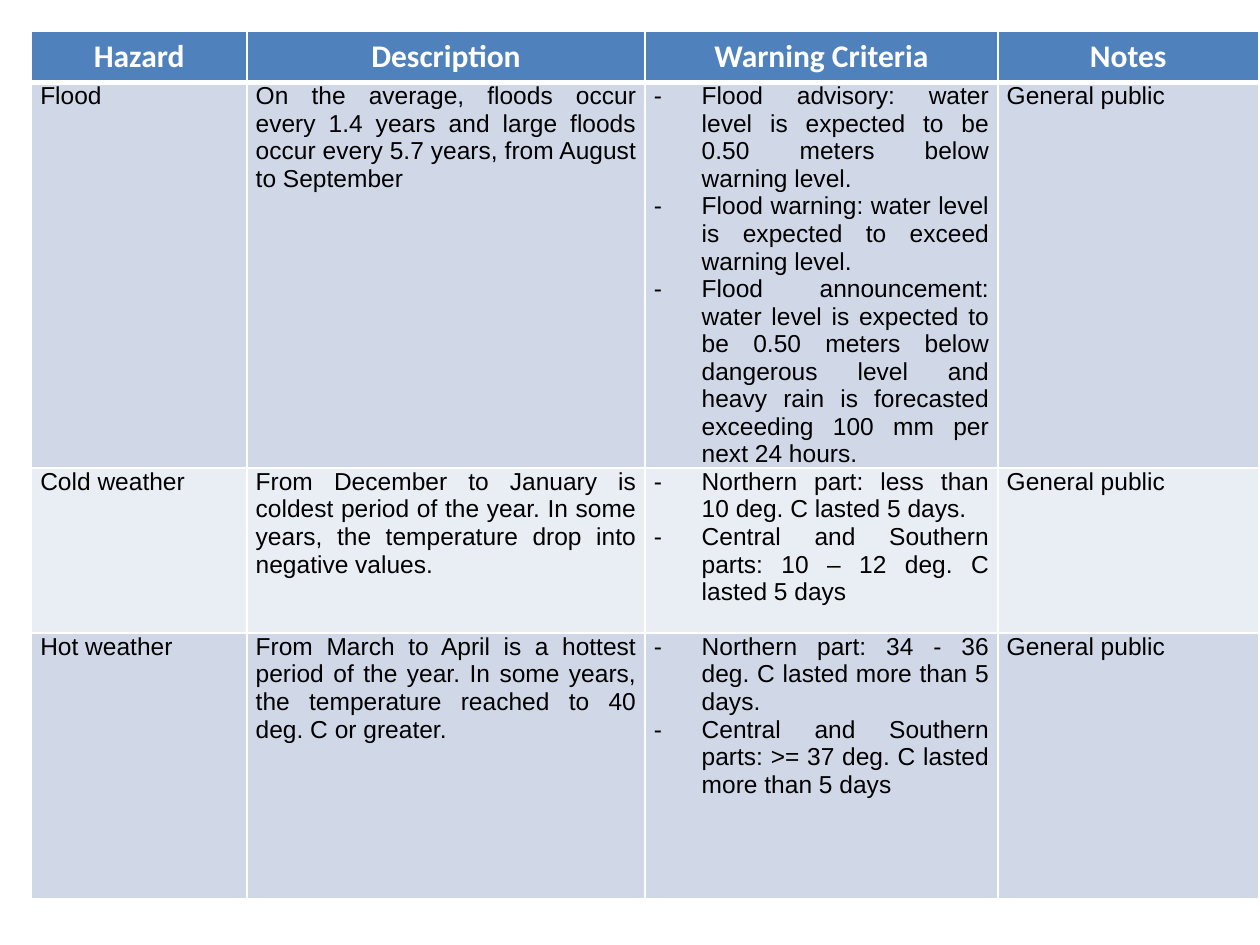
import pptx
import pptx.util
import pptx.dml.color
import pptx.enum.text
import pptx.oxml.ns
from lxml import etree

Inches = pptx.util.Inches
Pt = pptx.util.Pt
Align = pptx.enum.text.PP_ALIGN

HEADS = ["Hazard", "Description", "Warning Criteria", "Notes"]
HAZARDS = [
    ("Flood",
     "On the average, floods occur every 1.4 years and large floods occur "
     "every 5.7 years, from August to September",
     ["Flood advisory: water level is expected to be 0.50 meters below warning level.",
      "Flood warning: water level is expected to exceed warning level.",
      "Flood announcement: water level is expected to be 0.50 meters below dangerous "
      "level and heavy rain is forecasted exceeding 100 mm per next 24 hours."],
     "General public"),
    ("Cold weather",
     "From December to January is coldest period of the year. In some years, "
     "the temperature drop into negative values.",
     ["Northern part: less than 10 deg. C lasted 5 days.",
      "Central and Southern parts: 10 – 12 deg. C lasted 5 days"],
     "General public"),
    ("Hot weather",
     "From March to April is a hottest period of the year. In some years, "
     "the temperature reached to 40 deg. C or greater.",
     ["Northern part: 34 - 36 deg. C lasted more than 5 days.",
      "Central and Southern parts: >= 37 deg. C lasted more than 5 days"],
     "General public"),
]
WIDTHS = [1.71, 3.16, 2.8, 2.07]
HEIGHTS = [0.4, 3.06, 1.31, 2.11]


def color(code):
    return pptx.dml.color.RGBColor.from_string(code)


def add(parent, tag, **attrs):
    node = etree.SubElement(parent, pptx.oxml.ns.qn(tag))
    for name, value in attrs.items():
        node.set(name, str(value))
    return node


class Deck:
    head = "4F81BD"
    bands = ["D0D8E8", "E9EDF4"]
    white = "FFFFFF"
    black = "000000"

    def __init__(self):
        self.file = pptx.Presentation()
        self.file.slide_width = Inches(10)
        self.file.slide_height = Inches(7.5)
        self.slide = self.file.slides.add_slide(self.file.slide_layouts[6])

    def table(self, left, top, widths, heights):
        frame = self.slide.shapes.add_table(
            len(heights), len(widths), Inches(left), Inches(top),
            Inches(sum(widths)), Inches(sum(heights)))
        grid = frame.table
        grid.horz_banding = False
        for col, width in zip(grid.columns, widths):
            col.width = Inches(width)
        for row, height in zip(grid.rows, heights):
            row.height = Inches(height)
        return grid

    def edges(self, cell, top, bottom):
        props = cell._tc.get_or_add_tcPr()
        sides = {"a:lnL": 1, "a:lnR": 1, "a:lnT": top, "a:lnB": bottom}
        for spot, (tag, width) in enumerate(sides.items()):
            line = add(props, tag, w=Pt(width))
            add(add(line, "a:solidFill"), "a:srgbClr", val=self.white)
            props.insert(spot, line)

    def paint(self, cell, fill, top=1, bottom=1):
        cell.fill.solid()
        cell.fill.fore_color.rgb = color(fill)
        self.edges(cell, top, bottom)

    def label(self, cell, text, font, size, ink, bold, align):
        cell.text_frame.text = text
        for para in cell.text_frame.paragraphs:
            para.alignment = align
            for run in para.runs:
                run.font.name = font
                run.font.size = Pt(size)
                run.font.bold = bold
                run.font.color.rgb = color(ink)

    def title(self, cell, text):
        self.paint(cell, self.head, bottom=3)
        self.label(cell, text, "Calibri", 18, self.white, True, Align.CENTER)

    def body(self, cell, text, row):
        self.paint(cell, self.bands[(row - 1) % 2], top=3 if row == 1 else 1)
        cell.margin_left = cell.margin_right = Inches(0.07)
        cell.margin_top = cell.margin_bottom = 0
        self.label(cell, text, "Arial", 14, self.black, False, Align.JUSTIFY)

    def points(self, cell, items, row):
        self.body(cell, "\n".join(items), row)
        for para in cell.text_frame.paragraphs:
            props = para._p.get_or_add_pPr()
            props.set("marL", str(Inches(0.38)))
            props.set("indent", str(-Inches(0.38)))
            add(props, "a:buFont", typeface="Arial")
            add(props, "a:buChar", char="-")


def main():
    deck = Deck()
    grid = deck.table(0.25, 0.25, WIDTHS, HEIGHTS)
    for col, text in enumerate(HEADS):
        deck.title(grid.cell(0, col), text)
    for row, hazard in enumerate(HAZARDS, 1):
        for col, text in enumerate(hazard):
            fill = deck.points if isinstance(text, list) else deck.body
            fill(grid.cell(row, col), text, row)
    deck.file.save("out.pptx")


if __name__ == "__main__":
    main()
